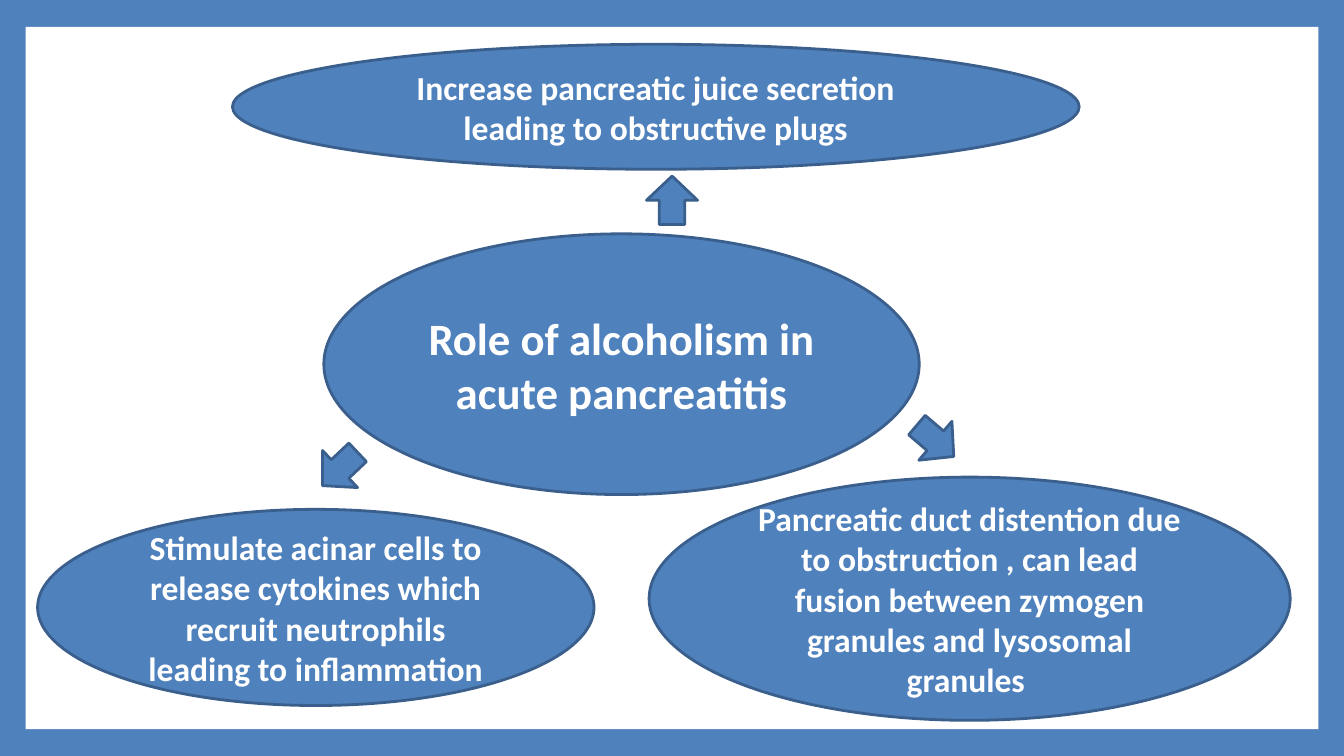
from pptx import Presentation
from pptx.dml.color import RGBColor
from pptx.enum.shapes import MSO_SHAPE
from pptx.enum.text import MSO_ANCHOR, PP_ALIGN
from pptx.util import Inches, Pt

WIDE = 10
HIGH = WIDE * 9 / 16
HUES = {"blue": "4F81BD", "edge": "3A5F8C", "white": "FFFFFF"}
FONT = "Calibri"

# text, size, (left, top, width, height) in inches
BUBBLES = [
    ("Role of alcoholism in acute pancreatitis", 24, (2.41, 1.74, 4.43, 1.94)),
    ("Increase pancreatic juice secretion leading to obstructive plugs", 18,
     (1.73, 0.33, 6.3, 0.93)),
    ("Stimulate acinar cells to release cytokines which recruit neutrophils "
     "leading to inflammation", 18, (0.28, 3.79, 4.14, 1.46)),
    ("Pancreatic duct distention due to obstruction , can lead fusion between "
     "zymogen granules and lysosomal granules ", 18, (4.83, 3.55, 4.77, 1.81)),
]
# left, top, turn in degrees
ARROWS = [(6.77, 3.1, 310.4), (4.81, 1.31, 180), (2.34, 3.31, 46.6)]
ARROW_SIZE = (0.38, 0.36)
FRAME = (0.19, 0.2)


def hue(name):
    return RGBColor.from_string(HUES[name])


def draw(slide, kind, box, fill="blue", edge="edge"):
    shape = slide.shapes.add_shape(kind, *map(Inches, box))
    shape.shadow.inherit = False
    shape.fill.solid()
    shape.fill.fore_color.rgb = hue(fill)
    if edge:
        shape.line.color.rgb = hue(edge)
        shape.line.width = Pt(1.5)
    else:
        shape.line.fill.background()
    return shape


def write(shape, text, size):
    frame = shape.text_frame
    frame.word_wrap = True
    frame.vertical_anchor = MSO_ANCHOR.MIDDLE
    para = frame.paragraphs[0]
    para.alignment = PP_ALIGN.CENTER
    run = para.add_run()
    run.text = text
    font = run.font
    font.name, font.size, font.bold = FONT, Pt(size), True
    font.color.rgb = hue("white")


def main():
    deck = Presentation()
    deck.slide_width, deck.slide_height = Inches(WIDE), Inches(HIGH)
    slide = deck.slides.add_slide(deck.slide_layouts[6])
    back = slide.background.fill
    back.solid()
    back.fore_color.rgb = hue("blue")

    side, top = FRAME
    panel = (side, top, WIDE - 2 * side, HIGH - 2 * top)
    draw(slide, MSO_SHAPE.RECTANGLE, panel, "white", None)

    for text, size, box in BUBBLES:
        write(draw(slide, MSO_SHAPE.OVAL, box), text, size)

    for left, top, turn in ARROWS:
        arrow = draw(slide, MSO_SHAPE.DOWN_ARROW, (left, top, *ARROW_SIZE))
        arrow.rotation = turn

    deck.save("out.pptx")


if __name__ == "__main__":
    main()
